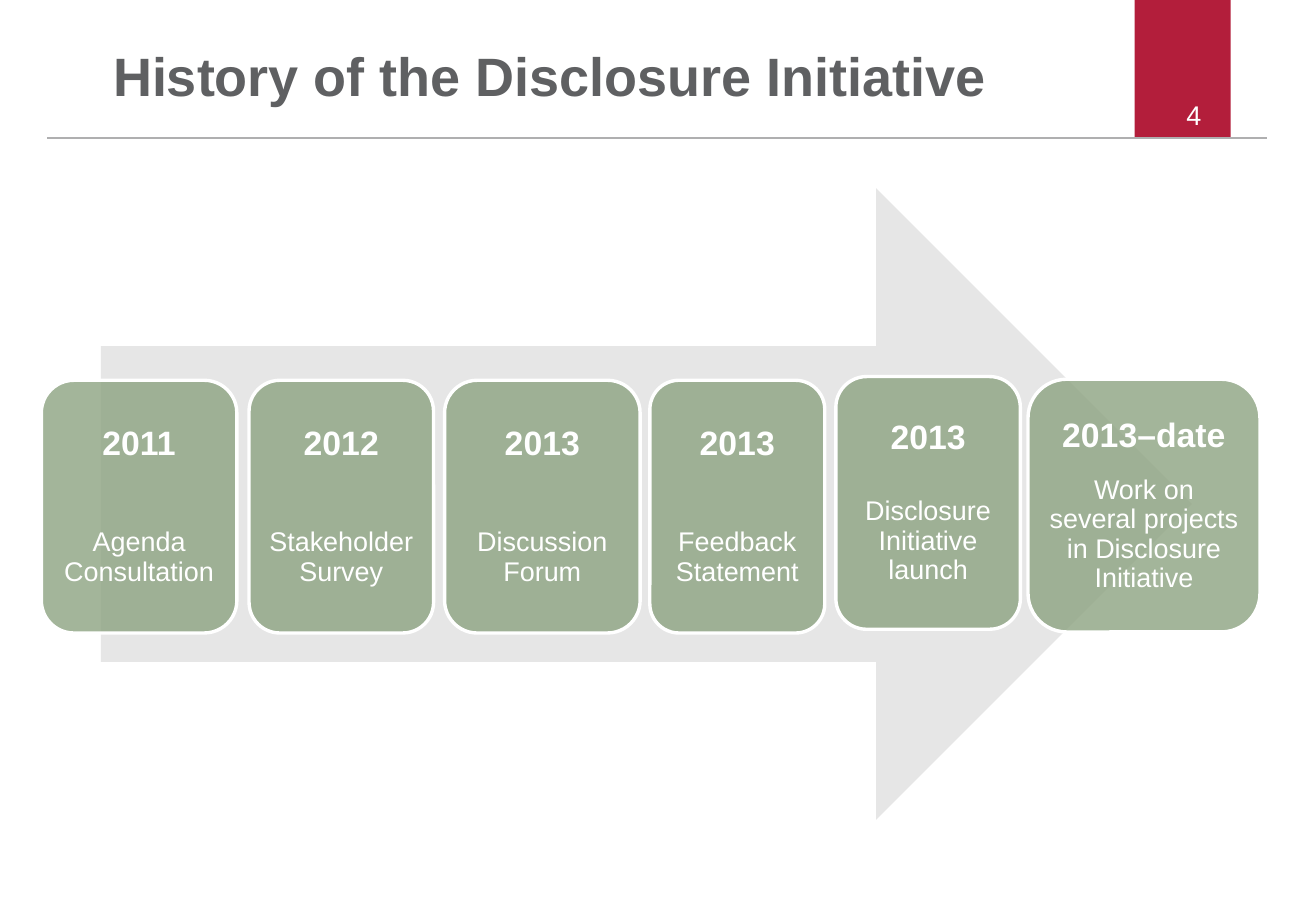
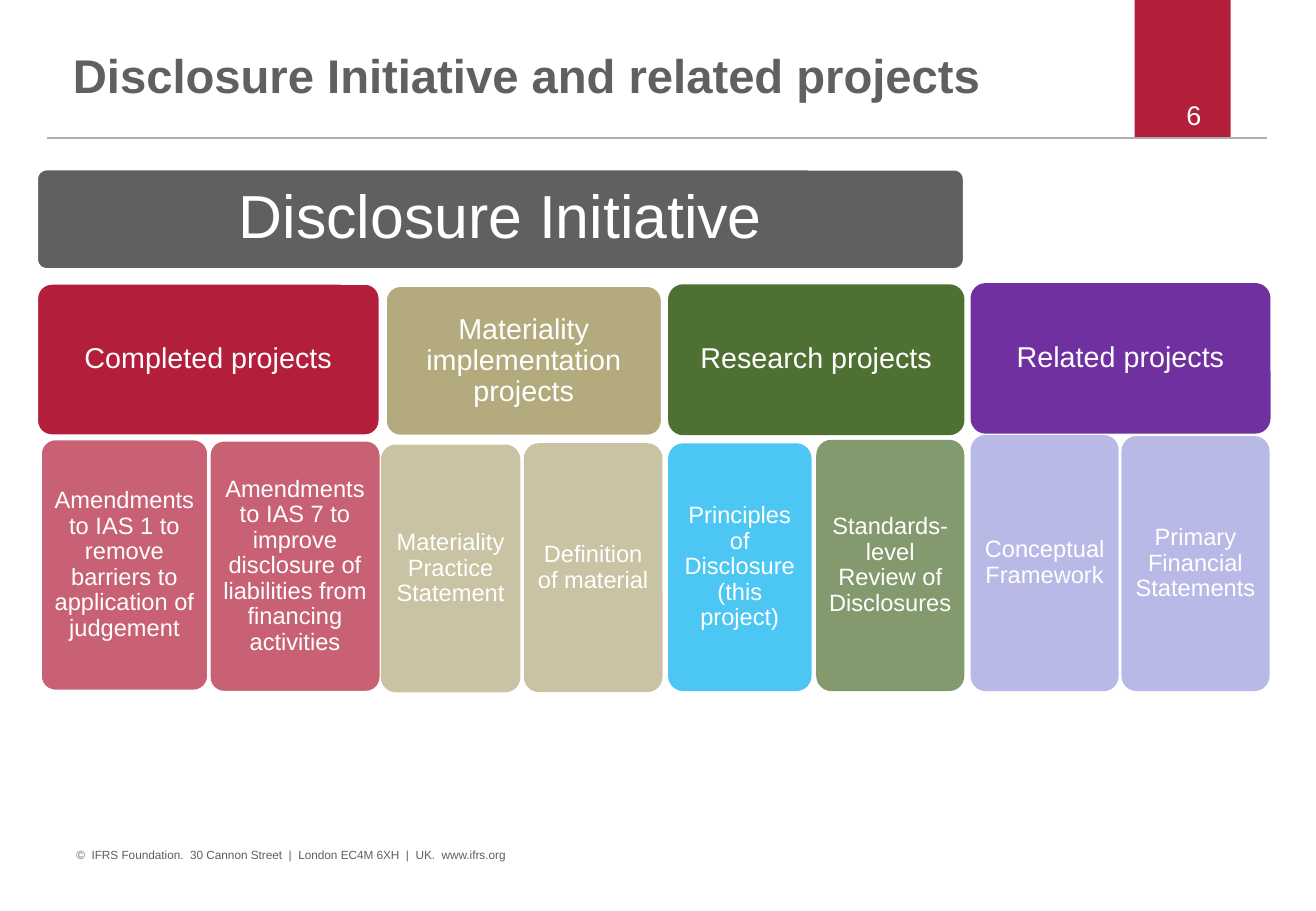
from lxml import etree
from pptx import Presentation
from pptx.dml.color import RGBColor
from pptx.enum.shapes import MSO_CONNECTOR, MSO_SHAPE
from pptx.enum.text import MSO_ANCHOR, MSO_AUTO_SIZE, PP_ALIGN
from pptx.oxml.ns import qn
from pptx.util import Pt

RECTANGLE = MSO_SHAPE.RECTANGLE
ROUNDED = MSO_SHAPE.ROUNDED_RECTANGLE
RIGHT_ARROW = MSO_SHAPE.RIGHT_ARROW
STRAIGHT = MSO_CONNECTOR.STRAIGHT
TOP, MIDDLE = MSO_ANCHOR.TOP, MSO_ANCHOR.MIDDLE
LEFT, CENTER = PP_ALIGN.LEFT, PP_ALIGN.CENTER
NO_AUTOFIT = MSO_AUTO_SIZE.NONE

FONT = "Arial"
WHITE = RGBColor(0xFF, 0xFF, 0xFF)
SLATE = RGBColor(0x5F, 0x60, 0x62)
RULE_GREY = RGBColor(0xAF, 0xAF, 0xB0)
ARROW_GREY = RGBColor(0xE6, 0xE6, 0xE6)
CRIMSON = RGBColor(0xB3, 0x1E, 0x3B)
SAGE = RGBColor(0x8D, 0xA3, 0x81)
SAND = RGBColor(0xB3, 0xAA, 0x7E)
GREEN = RGBColor(0x4F, 0x70, 0x33)
SKY = RGBColor(0x00, 0xB0, 0xF0)
PURPLE = RGBColor(0x70, 0x30, 0xA0)
LILAC = RGBColor(0x9C, 0x9C, 0xDF)

TITLE_ONLY = 5
CORNER_INSET = 0.29
COPYRIGHT = "©  IFRS Foundation.  30 Cannon Street  |  London EC4M 6XH  |  UK.  www.ifrs.org"

MILESTONES = [
    (24.5, 225.4, 115.9, "2011", "Agenda Consultation", 39),
    (147.6, 225.4, 109.4, "2012", "Stakeholder Survey", 39),
    (263.5, 225.4, 115.9, "2013", "Discussion Forum", 39),
    (385.2, 225.4, 103.7, "2013", "Feedback Statement", 39),
    (495.4, 223.2, 109.4, "2013", "Disclosure Initiative launch", 24),
    (609.3, 224.8, 137.5, "2013–date", "Work on several projects in Disclosure Initiative", 13),
]

PROJECT_GROUPS = [
    ((21.6, 167.8, 203.8, 90.7), "Completed projects", CRIMSON, True, [
        ((2.2, 92.2, 100, 149.8), CRIMSON, True,
         "Amendments to IAS 1 to remove barriers to application of judgement"),
        ((102.2, 92.9, 102.2, 149.8), CRIMSON, True,
         "Amendments to IAS 7 to improve disclosure of liabilities from financing activities"),
    ]),
    ((228.3, 169.1, 164.4, 89.6), "Materiality implementation projects", SAND, True, [
        ((-2.6, 94.4, 82.8, 146.9), SAND, False, "Materiality Practice Statement"),
        ((82.2, 93.6, 82.2, 147.6), SAND, False, "Definition of material"),
    ]),
    ((396, 168.5, 175.7, 89.5), "Research projects", GREEN, False, [
        ((0, 94.3, 85, 146.9), SKY, False, "Principles of Disclosure (this project)"),
        ((87.8, 92.2, 87.8, 149), GREEN, False, "Standards-level Review of Disclosures"),
    ]),
    ((575.3, 167.8, 177.8, 89.3), "Related projects", PURPLE, False, [
        ((0, 90, 87.8, 151.9), LILAC, False, "Conceptual Framework"),
        ((89.4, 90.7, 87.8, 151.2), LILAC, False, "Primary Financial Statements"),
    ]),
]


def add_span(para, text, size, color, bold=False):
    """Add one formatted run to a paragraph."""
    span = para.add_run()
    span.text = text
    span.font.name = FONT
    span.font.size = Pt(size)
    span.font.bold = bold
    span.font.color.rgb = color


def add_panel(page, kind, box, color, opacity=100, outlined=False):
    """Add a filled preset shape, optionally translucent or outlined in white."""
    panel = page.shapes.add_shape(kind, *map(Pt, box))
    panel.shadow.inherit = False
    panel.fill.solid()
    panel.fill.fore_color.rgb = color
    if opacity < 100:
        tint = panel.element.spPr.find(qn("a:solidFill"))[0]
        etree.SubElement(tint, qn("a:alpha")).set("val", str(opacity * 1000))
    if outlined:
        panel.line.color.rgb = WHITE
        panel.line.width = Pt(2)
    else:
        panel.line.fill.background()
    return panel


def add_tile(page, box, color, lines, radius, inset, opacity=100, outlined=False):
    """Add a rounded tile holding centred lines of (text, size, bold, gap after)."""
    tile = add_panel(page, ROUNDED, box, color, opacity, outlined)
    tile.adjustments[0] = radius / min(box[2:])
    frame = tile.text_frame
    frame.word_wrap = True
    frame.vertical_anchor = MIDDLE
    margin = Pt(inset - CORNER_INSET * radius)
    frame.margin_left = frame.margin_right = margin
    frame.margin_top = frame.margin_bottom = margin
    for index, (text, size, bold, gap) in enumerate(lines):
        para = frame.add_paragraph() if index else frame.paragraphs[0]
        para.alignment = CENTER
        para.line_spacing = 0.9
        para.space_after = Pt(gap)
        add_span(para, text, size, WHITE, bold)


def add_label(page, box, text, size, color, wrap):
    """Add a plain one-line text box."""
    frame = page.shapes.add_textbox(*map(Pt, box)).text_frame
    frame.word_wrap = wrap
    add_span(frame.paragraphs[0], text, size, color)


def add_page(deck, title, title_box, title_size, anchor, number):
    """Add a slide with the shared band, rule, title and page number."""
    page = deck.slides.add_slide(deck.slide_layouts[TITLE_ONLY])
    add_panel(page, RECTANGLE, (672.5, 0, 56.9, 82.1), CRIMSON)
    rule = page.shapes.add_connector(STRAIGHT, Pt(28.1), Pt(82.1), Pt(751), Pt(82.1))
    rule.line.color.rgb = RULE_GREY
    rule.line.width = Pt(1.2)
    etree.SubElement(rule.element.spPr, qn("a:effectLst"))
    heading = page.shapes.title
    heading.left, heading.top, heading.width, heading.height = map(Pt, title_box)
    frame = heading.text_frame
    frame.auto_size = NO_AUTOFIT
    frame.vertical_anchor = anchor
    para = frame.paragraphs[0]
    para.alignment = LEFT
    para.line_spacing = 0.9
    add_span(para, title, title_size, SLATE, True)
    add_label(page, (696.2, 54.7, 23.8, 26.6), number, 16, WHITE, False)
    return page


def add_timeline(page, box):
    """Draw the arrow in its box and the milestone cards across it."""
    add_panel(page, RIGHT_ARROW, box, ARROW_GREY)
    for left, top, width, year, event, gap in MILESTONES:
        card = (left, top, width, 149.8)
        radius = min(card[2:]) / 6
        lines = [(year, 20, True, gap), (event, 16, False, 0)]
        add_tile(page, card, SAGE, lines, radius, 5.5 + CORNER_INSET * radius, 80, True)


def add_project_group(page, box, name, color, outlined, projects):
    """Draw a group heading in its box and its project tiles below it."""
    add_tile(page, box, color, [(name, 17, False, 0)], 9, 8, outlined=outlined)
    for (dx, dy, width, height), tint, edged, text in projects:
        tile = (box[0] + dx, box[1] + dy, width, height)
        add_tile(page, tile, tint, [(text, 14, False, 0)], 9, 7, 70, edged)


def build_history(deck):
    """Build the history slide."""
    page = add_page(deck, "History of the Disclosure Initiative",
                    (59.8, 25.9, 577.4, 45.4), 32, TOP, "4")
    add_timeline(page, (59.8, 111.6, 646.6, 374.4))


def build_projects(deck):
    """Build the slide of project groups."""
    page = add_page(deck, "Disclosure Initiative and related projects",
                    (36, 10.8, 626.4, 71.3), 28, MIDDLE, "6")
    add_tile(page, (21.6, 100.1, 550.1, 59.8), SLATE,
             [("Disclosure Initiative", 36, False, 0)], 6, 8, outlined=True)
    for group in PROJECT_GROUPS:
        add_project_group(page, *group)
    add_label(page, (38.2, 499, 481.7, 15.1), COPYRIGHT, 7, SLATE, True)


def main():
    """Build and save the deck."""
    deck = Presentation()
    deck.slide_width, deck.slide_height = Pt(780), Pt(540)
    build_history(deck)
    build_projects(deck)
    deck.save("out.pptx")


if __name__ == "__main__":
    main()
